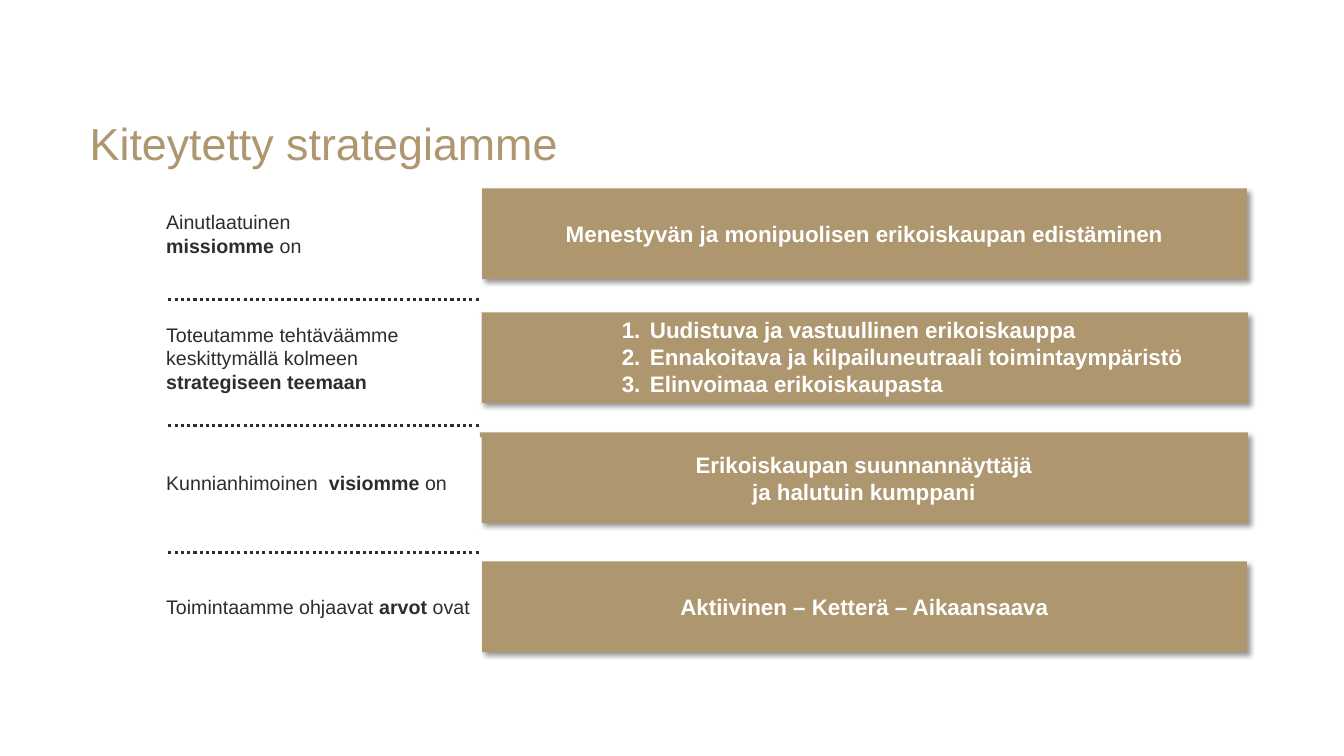
from lxml.etree import SubElement
from pptx import Presentation
from pptx.dml.color import RGBColor
from pptx.enum.dml import MSO_LINE
from pptx.enum.shapes import MSO_CONNECTOR, MSO_SHAPE
from pptx.enum.text import MSO_ANCHOR, MSO_AUTO_SIZE, PP_ALIGN
from pptx.oxml.ns import qn
from pptx.util import Pt

COLORS = {"gold": "AE976F", "ink": "2D2D2D", "white": "FFFFFF", "shadow": "000000"}
TITLE_FONT = {"name": "Arial", "size": Pt(32), "bold": False}
BAR_FONT = {"name": "Arial", "size": Pt(16), "bold": True}
LABEL_FONT = {"name": "Arial", "size": Pt(14), "bold": False}

ROW_HEIGHT = 64.8
LABEL_LEFT, LABEL_WIDTH = 111.6, 232.56
DIVIDER_LEFT, DIVIDER_RIGHT = 120.24, 342.72
DIVIDER_TOP, DIVIDER_PITCH = 213.84, 90.36

# Each row: bar box (left, top, width), label top, label runs (text, bold), bar lines
ROWS = [
    ((344.16, 134.64, 546.48), 134.64,
     [("Ainutlaatuinen\v", False), ("missiomme", True), (" on", False)],
     ["Menestyvän ja monipuolisen erikoiskaupan edistäminen"]),
    ((342.72, 223.2, 548.64), 223.2,
     [("Toteutamme tehtäväämme keskittymällä kolmeen ", False),
      ("strategiseen teemaan", True)],
     ["Uudistuva ja vastuullinen erikoiskauppa",
      "Ennakoitava ja kilpailuneutraali toimintaympäristö",
      "Elinvoimaa erikoiskaupasta"]),
    ((342.72, 308.88, 548.64), 312.48,
     [("Kunnianhimoinen  ", False), ("visiomme", True), (" on", False)],
     ["Erikoiskaupan suunnannäyttäjä\vja halutuin kumppani"]),
    ((344.16, 401.04, 546.48), 401.04,
     [("Toimintaamme ohjaavat ", False), ("arvot", True), (" ovat", False)],
     ["Aktiivinen – Ketterä – Aikaansaava"]),
]


def rgb(name):
    return RGBColor.from_string(COLORS[name])


def add_run(p, text, font, color):
    for i, line in enumerate(text.split("\v")):
        if i:
            p.add_line_break()
        if line:
            r = p.add_run()
            r.text = line
            for key, value in font.items():
                setattr(r.font, key, value)
            r.font.color.rgb = rgb(color)


def add_box(s, left, top, width, fill):
    sp = s.shapes.add_shape(MSO_SHAPE.RECTANGLE, Pt(left), Pt(top),
                            Pt(width), Pt(ROW_HEIGHT))
    sp.shadow.inherit = False
    sp.fill.solid()
    sp.fill.fore_color.rgb = rgb(fill)
    sp.line.fill.background()
    sp.text_frame.word_wrap = True
    sp.text_frame.vertical_anchor = MSO_ANCHOR.MIDDLE
    return sp


def add_shadow(sp):
    effects = sp._element.spPr.find(qn("a:effectLst"))
    shadow = SubElement(effects, qn("a:outerShdw"), blurRad=str(Pt(4)),
                        dist=str(Pt(3)), dir="2700000", algn="tl", rotWithShape="0")
    color = SubElement(shadow, qn("a:srgbClr"), val=COLORS["shadow"])
    SubElement(color, qn("a:alpha"), val="40000")


def number_paragraph(p):
    pPr = p._p.get_or_add_pPr()
    pPr.set("marL", str(Pt(114.48)))
    pPr.set("indent", str(Pt(-20.16)))
    SubElement(pPr, qn("a:buFont"), typeface="+mj-lt")
    SubElement(pPr, qn("a:buAutoNum"), type="arabicPeriod")


def add_title(s, left, top, width, height):
    title = s.shapes.title
    title.left, title.top, title.width, title.height = map(Pt, (left, top, width, height))
    tf = title.text_frame
    tf.word_wrap = True
    tf.auto_size = MSO_AUTO_SIZE.NONE
    tf.vertical_anchor = MSO_ANCHOR.BOTTOM
    p = tf.paragraphs[0]
    p.alignment = PP_ALIGN.LEFT
    p.line_spacing = 0.9
    p.space_after = Pt(12)
    add_run(p, "Kiteytetty strategiamme", TITLE_FONT, "gold")


def add_bar(s, left, top, width, lines):
    sp = add_box(s, left, top, width, "gold")
    add_shadow(sp)
    tf = sp.text_frame
    for i, line in enumerate(lines):
        p = tf.add_paragraph() if i else tf.paragraphs[0]
        p.alignment = PP_ALIGN.CENTER
        if len(lines) > 1:
            p.alignment = PP_ALIGN.LEFT
            p.line_spacing = 0.9
            if i:
                p.space_before = Pt(2)
            number_paragraph(p)
        add_run(p, line, BAR_FONT, "white")


def add_divider(s, left, right, y):
    line = s.shapes.add_connector(MSO_CONNECTOR.STRAIGHT, Pt(left), Pt(y), Pt(right), Pt(y))
    line.line.color.rgb = rgb("ink")
    line.line.width = Pt(2.25)
    line.line.dash_style = MSO_LINE.ROUND_DOT
    SubElement(line._element.spPr, qn("a:effectLst"))


def add_label(s, left, top, width, runs):
    sp = add_box(s, left, top, width, "white")
    p = sp.text_frame.paragraphs[0]
    p.alignment = PP_ALIGN.LEFT
    p.space_after = Pt(2)
    for text, bold in runs:
        add_run(p, text, {**LABEL_FONT, "bold": bold}, "ink")


def main():
    prs = Presentation()
    prs.slide_width, prs.slide_height = Pt(960), Pt(540)
    s = prs.slides.add_slide(prs.slide_layouts[5])
    add_title(s, 56.88, 41.04, 720, 84.24)

    # Gold statement bars
    for bar_box, _, _, lines in ROWS:
        add_bar(s, *bar_box, lines)

    # Dotted dividers between the rows
    for i in range(len(ROWS) - 1):
        add_divider(s, DIVIDER_LEFT, DIVIDER_RIGHT, DIVIDER_TOP + i * DIVIDER_PITCH)

    # Labels on the left
    for _, label_top, runs, _ in ROWS:
        add_label(s, LABEL_LEFT, label_top, LABEL_WIDTH, runs)

    prs.save("out.pptx")


if __name__ == "__main__":
    main()
